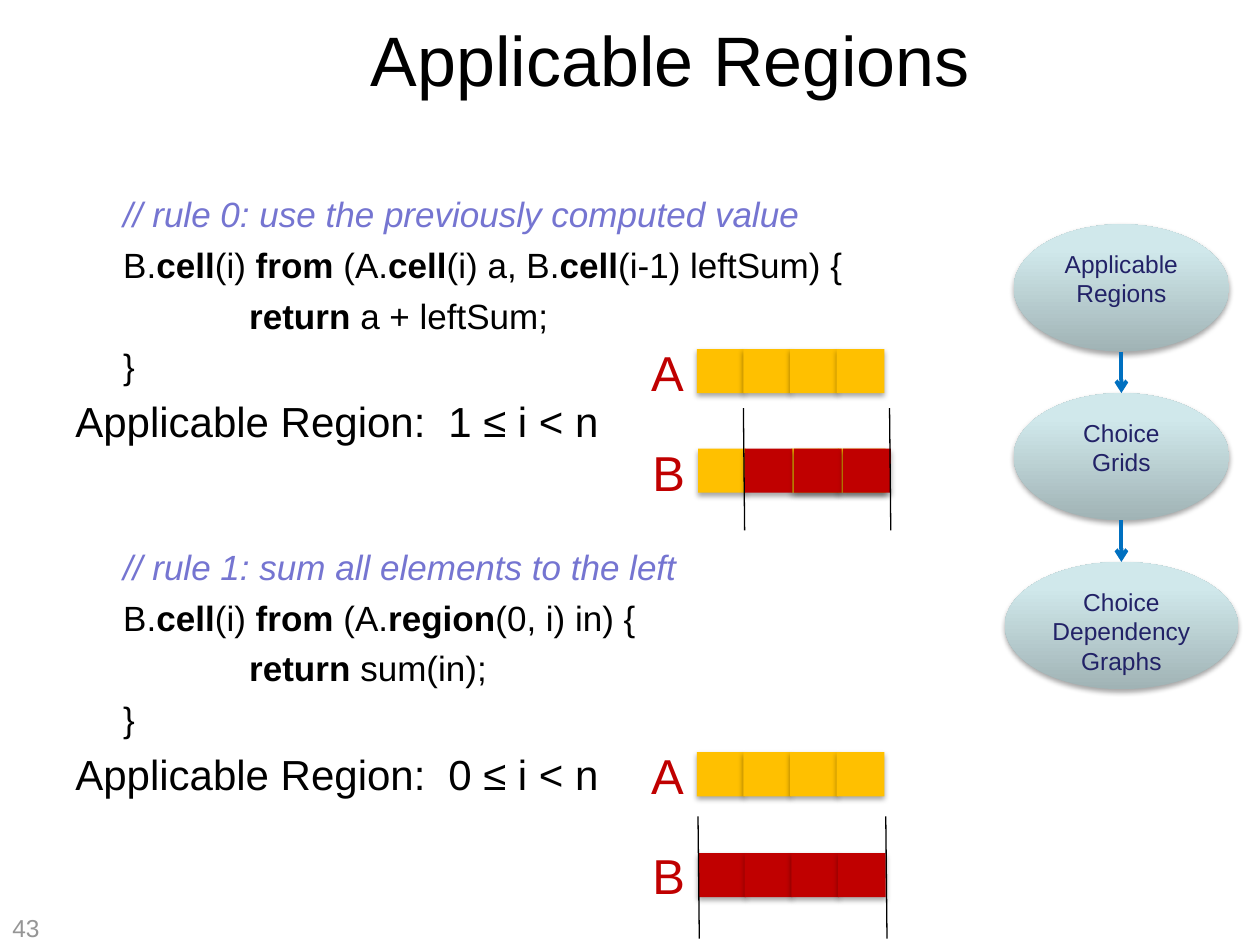
from lxml.etree import SubElement
from pptx import Presentation
from pptx.dml.color import RGBColor
from pptx.enum.shapes import MSO_CONNECTOR, MSO_SHAPE
from pptx.enum.text import MSO_ANCHOR, PP_ALIGN
from pptx.oxml.ns import qn
from pptx.util import Inches, Pt

COLORS = {
    "black": "000000", "comment": "7575D1", "gray": "969696", "navy": "222267",
    "dark": "A0B3B5", "light": "D0E8EB", "arrow": "0070C0",
    "yellow": "FFC000", "red": "C00000",
}


def color(name):
    return RGBColor.from_string(COLORS[name])


def write(frame, text, size=20, ink="black", italic=False, align=PP_ALIGN.LEFT,
          indent=0, tab=None, before=0):
    """Add a paragraph to the frame, with words between asterisks in bold."""
    para = frame.paragraphs[0]
    if para.runs:
        para = frame.add_paragraph()
    para.alignment = align
    para.space_before = Pt(before)
    properties = para._p.get_or_add_pPr()
    properties.set("marL", str(Inches(indent)))
    if tab:
        stops = SubElement(properties, qn("a:tabLst"))
        SubElement(stops, qn("a:tab"), pos=str(Inches(tab)), algn="l")
    for index, part in enumerate(text.split("*")):
        if part:
            span = para.add_run()
            span.text = part
            span.font.name = "Arial"
            span.font.size = Pt(size)
            span.font.bold = index % 2 == 1
            span.font.italic = italic
            span.font.color.rgb = color(ink)


class Sketch:
    """Draws the elements of the current slide in one style."""

    def __init__(self, page):
        self.page = page

    def text(self, left, top, width, height, text=None, wrap=True,
             anchor=MSO_ANCHOR.TOP, **style):
        box = self.page.shapes.add_textbox(
            Inches(left), Inches(top), Inches(width), Inches(height))
        frame = box.text_frame
        frame.word_wrap = wrap
        frame.vertical_anchor = anchor
        if text:
            write(frame, text, **style)
        return frame

    def rule(self, top, comment, head, result, region):
        frame = self.text(0.5, top, 7.94, 2.2)
        write(frame, comment, ink="comment", italic=True, indent=0.38)
        for line, indent in ((head, 0.38), (result, 1.38), ("}", 0.38)):
            write(frame, line, indent=indent, before=5)
        write(frame, f"Applicable Region:\t{region}", size=24, tab=2.96, before=5)

    def shape(self, kind, left, top, width, height):
        shape = self.page.shapes.add_shape(
            kind, Inches(left), Inches(top), Inches(width), Inches(height))
        shape.line.fill.background()
        shape.shadow.inherit = False
        effects = shape._element.spPr.find(qn("a:effectLst"))
        shadow = SubElement(effects, qn("a:outerShdw"), blurRad=str(Pt(3.1)),
                            dist=str(Pt(1.8)), dir="5400000", rotWithShape="0")
        shade = SubElement(shadow, qn("a:srgbClr"), val=COLORS["black"])
        SubElement(shade, qn("a:alpha"), val="35000")
        return shape

    def step(self, center, top, width, text):
        oval = self.shape(MSO_SHAPE.OVAL, center - width / 2, top, width, 1.01)
        oval.fill.gradient()
        oval.fill.gradient_angle = 90
        stops = oval.fill.gradient_stops
        for stop, name, position in zip(stops, ("dark", "light"), (0, 0.8)):
            stop.color.rgb = color(name)
            stop.position = position
        frame = oval.text_frame
        frame.word_wrap = True
        frame.vertical_anchor = MSO_ANCHOR.TOP
        frame.margin_left = frame.margin_right = Inches(0.08)
        write(frame, text, size=14, ink="navy", align=PP_ALIGN.CENTER)

    def cells(self, lefts, top, fill):
        for left in lefts:
            cell = self.shape(MSO_SHAPE.RECTANGLE, left, top, 0.38, 0.35)
            cell.fill.solid()
            cell.fill.fore_color.rgb = color(fill)

    def label(self, left, top, letter):
        self.text(left, top, 0.46, 0.57, letter, wrap=False, size=28, ink="red")

    def line(self, start, end, ink="black", width=0.75, arrow=False):
        line = self.page.shapes.add_connector(
            MSO_CONNECTOR.STRAIGHT, *map(Inches, start + end))
        line.line.color.rgb = color(ink)
        line.line.width = Pt(width)
        if arrow:
            SubElement(line.get_or_add_ln(), qn("a:tailEnd"), type="arrow")
        SubElement(line._element.spPr, qn("a:effectLst"))


def row(left):
    return [left + 0.37 * index for index in range(4)]


def main():
    deck = Presentation()
    deck.slide_width, deck.slide_height = Inches(10), Inches(7.5)
    sketch = Sketch(deck.slides.add_slide(deck.slide_layouts[6]))

    sketch.text(1.3, 0, 8.04, 0.93, "Applicable Regions", size=40,
                anchor=MSO_ANCHOR.MIDDLE, align=PP_ALIGN.CENTER)
    sketch.rule(1.48, "// rule 0: use the previously computed value",
                "B.*cell*(i) *from* (A.*cell*(i) a, B.*cell*(i-1) leftSum) {",
                "*return* a + leftSum;", "1 ≤ i < n")
    sketch.rule(4.28, "// rule 1: sum all elements to the left",
                "B.*cell*(i) *from* (A.*region*(0, i) in) {",
                "*return* sum(in);", "0 ≤ i < n")
    sketch.text(0, 7.2, 0.47, 0.3, "43", size=14, ink="gray")

    steps = (("Applicable Regions", 1.71), ("Choice Grids", 1.71),
             ("Choice Dependency Graphs", 1.85))
    for index, (name, width) in enumerate(steps):
        top = 1.78 + 1.34 * index
        sketch.step(8.9, top, width, name)
        if index:
            sketch.line((8.9, top - 0.33), (8.9, top), "arrow", 2.25, arrow=True)

    for top in (2.77, 5.97):
        sketch.cells(row(5.53), top, "yellow")
        sketch.label(5.07, top - 0.1, "A")
        sketch.label(5.08, top + 0.69, "B")
    first, *rest = row(5.54)
    sketch.cells([first, *rest[1:]], 3.56, "yellow")
    sketch.cells([5.91, 6.3, 6.69], 3.56, "red")
    sketch.cells(row(5.54), 6.77, "red")

    for left, top in ((5.9, 3.24), (7.06, 3.24), (5.54, 6.48), (7.03, 6.48)):
        sketch.line((left, top), (left + 0.01, top + 0.97))

    deck.save("out.pptx")


if __name__ == "__main__":
    main()
